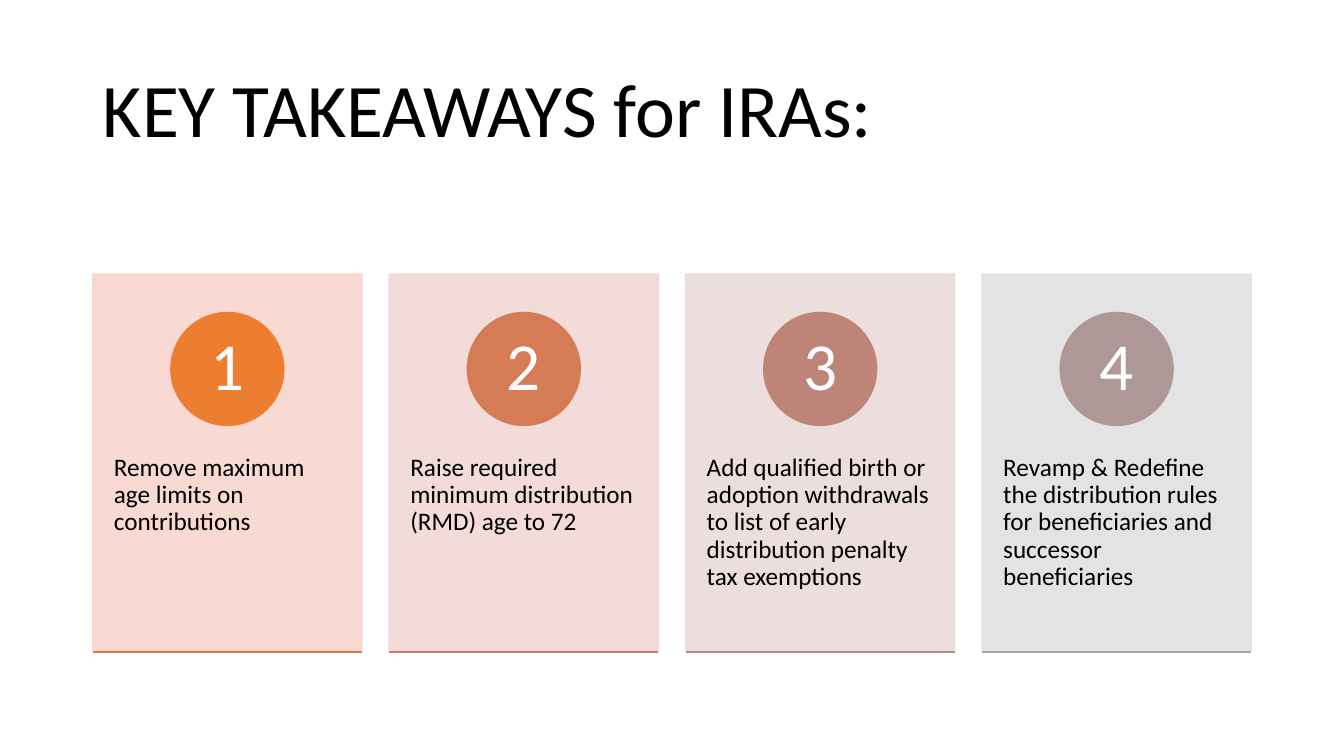
from dataclasses import dataclass

from lxml import etree
from pptx import Presentation
from pptx.dml.color import RGBColor
from pptx.enum.shapes import MSO_CONNECTOR, MSO_SHAPE
from pptx.enum.text import MSO_ANCHOR, MSO_AUTO_SIZE, PP_ALIGN
from pptx.oxml.ns import qn
from pptx.util import Inches, Pt

RECT, OVAL = MSO_SHAPE.RECTANGLE, MSO_SHAPE.OVAL
LINE = MSO_CONNECTOR.STRAIGHT
TOP, MIDDLE = MSO_ANCHOR.TOP, MSO_ANCHOR.MIDDLE
LEFT, CENTER = PP_ALIGN.LEFT, PP_ALIGN.CENTER
FIXED = MSO_AUTO_SIZE.NONE


@dataclass(frozen=True)
class Theme:
    font: str = "Calibri"
    ink: str = "000000"
    light: str = "FFFFFF"
    title: int = 54
    digit: int = 48
    body: int = 18
    line: int = 1
    alpha: int = 90
    # Card, badge and base line of each column
    cards: tuple = (
        ("F8D7CE", "ED7D31", "E07A44"),
        ("F1D8D4", "D57B56", "CA7E67"),
        ("E9DBDA", "BF8478", "B68D88"),
        ("E1E1E1", "AD9897", "A5A5A5"),
    )


class Deck:
    def __init__(self, theme):
        self.theme = theme
        self.file = Presentation()
        self.file.slide_width = Inches(13.33)
        self.file.slide_height = Inches(7.5)
        self.slide = self.file.slides.add_slide(self.file.slide_layouts[5])
        self.shapes = self.slide.shapes

    def label(self, shape, text, size, color, align=LEFT, anchor=TOP,
              pads=(0.1, 0.05), after=0):
        frame = shape.text_frame
        frame.text = text
        frame.word_wrap = True
        frame.auto_size = FIXED
        frame.vertical_anchor = anchor
        frame.margin_left = frame.margin_right = Inches(pads[0])
        frame.margin_top = frame.margin_bottom = Inches(pads[1])
        for para in frame.paragraphs:
            para.alignment = align
            para.line_spacing = 0.9
            para.space_before = Pt(0)
            para.space_after = Pt(after)
            for run in para.runs:
                run.font.name = self.theme.font
                run.font.size = Pt(size)
                run.font.color.rgb = RGBColor.from_string(color)

    def title(self, text, x, y, w, h):
        shape = self.shapes.title
        shape.left, shape.top = Inches(x), Inches(y)
        shape.width, shape.height = Inches(w), Inches(h)
        self.label(shape, text, self.theme.title, self.theme.ink,
                   anchor=MIDDLE, after=6)

    def shape(self, kind, x, y, w, h, color, alpha=100):
        shape = self.shapes.add_shape(
            kind, Inches(x), Inches(y), Inches(w), Inches(h))
        shape.shadow.inherit = False
        shape.line.width = Pt(self.theme.line)
        for fill in (shape.fill, shape.line.fill):
            fill.solid()
            fill.fore_color.rgb = RGBColor.from_string(color)
        if alpha < 100:
            for node in shape._element.spPr.iter(qn("a:srgbClr")):
                etree.SubElement(node, qn("a:alpha"), val=str(alpha * 1000))
        return shape

    def badge(self, text, x, y, size, color):
        shape = self.shape(OVAL, x, y, size, size, color)
        self.label(shape, text, self.theme.digit, self.theme.light,
                   CENTER, MIDDLE, (0.09, 0.01))

    def body(self, text, x, y, w, h):
        box = self.shapes.add_textbox(
            Inches(x), Inches(y), Inches(w), Inches(h))
        self.label(box, text, self.theme.body, self.theme.ink,
                   pads=(0.21, 0.36))

    def rule(self, x, y, w, color):
        line = self.shapes.add_connector(
            LINE, Inches(x), Inches(y), Inches(x + w), Inches(y))
        line.line.width = Pt(self.theme.line)
        line.line.color.rgb = RGBColor.from_string(color)
        etree.SubElement(line._element.spPr, qn("a:effectLst"))


def main():
    theme = Theme()
    deck = Deck(theme)
    deck.title("KEY TAKEAWAYS for IRAs:", 0.92, 0.4, 11.5, 1.45)

    # Four numbered cards in one row
    texts = (
        "Remove maximum age limits on contributions",
        "Raise required minimum distribution (RMD) age to 72",
        "Add qualified birth or adoption withdrawals to list of early "
        "distribution penalty tax exemptions",
        "Revamp & Redefine the distribution rules for beneficiaries and "
        "successor beneficiaries",
    )
    left, top, width, height = 0.92, 2.72, 2.67, 3.74
    step, disc = 2.94, 1.12
    for i, (text, (card, badge, base)) in enumerate(zip(texts, theme.cards)):
        x = left + i * step
        deck.shape(RECT, x, top, width, height, card, theme.alpha)
        deck.body(text, x, 4.15, width, 2.25)
        deck.badge(str(i + 1), x + (width - disc) / 2, 3.1, disc, badge)
        deck.rule(x, 6.47, width, base)

    deck.file.save("out.pptx")


if __name__ == "__main__":
    main()
